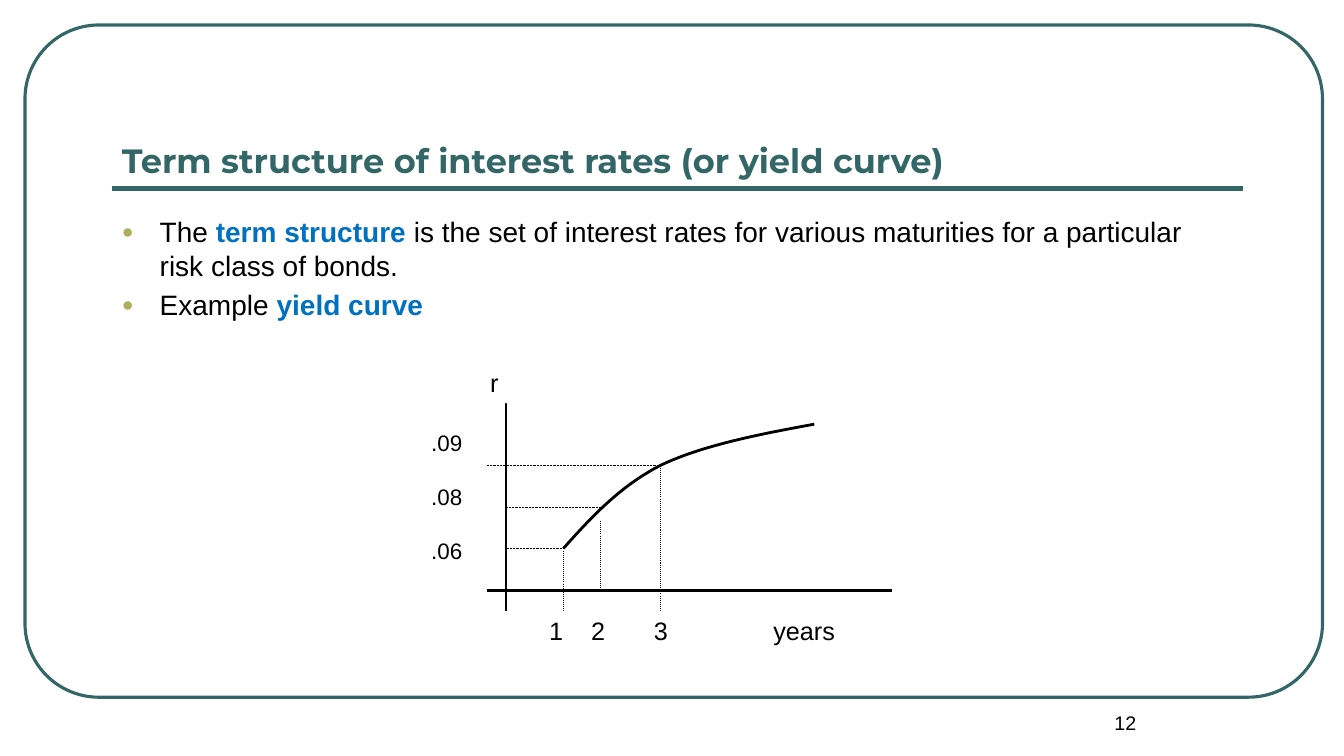
from dataclasses import dataclass

import lxml.etree
import pptx
import pptx.dml.color
import pptx.enum.dml
import pptx.enum.shapes
import pptx.enum.text
import pptx.oxml.ns
import pptx.util

Cm = pptx.util.Cm
Pt = pptx.util.Pt
qn = pptx.oxml.ns.qn
ALIGN = pptx.enum.text.PP_ALIGN
DASH = pptx.enum.dml.MSO_LINE

COLORS = {
    "teal": "336666",
    "black": "000000",
    "white": "FFFFFF",
    "term": "0070C0",
    "bullet": "AEAE5D",
}

# Chart geometry in cm
AXIS_X, AXIS_Y = 12.75, 14.88
LEFT_END, BOTTOM_END = 12.27, 15.39
YEAR_1, YEAR_2, YEAR_3 = 14.2, 15.14, 16.64
RATE_06, RATE_08, RATE_09 = 13.82, 12.78, 11.73
CURVE_END = (20.52, 10.69)


@dataclass(frozen=True)
class Line:
    start: tuple[float, float]
    end: tuple[float, float]
    width: float
    dotted: bool = False
    color: str = "black"


@dataclass(frozen=True)
class Label:
    box: tuple[float, float, float, float]
    texts: tuple[str, ...]
    size: float
    align: ALIGN = ALIGN.LEFT
    margin_left: float = 0.25
    margin_right: float = 0.25
    gap: float = 0
    tabs: tuple[float, ...] = ()
    filled: bool = False


LINES = [
    Line((2.82, 4.75), (31.32, 4.75), 3, color="teal"),
    Line((AXIS_X, 10.16), (AXIS_X, BOTTOM_END), 1.5),
    Line((LEFT_END, AXIS_Y), (22.48, AXIS_Y), 1.5),
    Line((YEAR_1, RATE_06), (AXIS_X, RATE_06), 0.5, True),
    Line((AXIS_X, RATE_08), (15.19, RATE_08), 0.5, True),
    Line((LEFT_END, RATE_09), (YEAR_3, RATE_09), 0.5, True),
    Line((YEAR_1, RATE_06), (YEAR_1, BOTTOM_END), 0.75, True),
    Line((YEAR_2, 13.13), (YEAR_2, 14.81), 0.75, True),
    Line((YEAR_3, RATE_09), (YEAR_3, BOTTOM_END), 0.75, True),
]

LABELS = [
    Label((25.4, 17.78, 5.92, 1.27), ("12",), 14, ALIGN.CENTER),
    Label((9.83, 10.69, 2.44, 3.66), (".09", ".08", ".06"), 16, ALIGN.RIGHT,
          margin_right=0.62, gap=19.5),
    Label((11.79, 9.12, 1.45, 1.04), ("r",), 18, margin_left=0.56, filled=True),
    Label((13.23, 15.39, 9.73, 1.57), ("1\t2\t3\tyears",), 18, margin_left=0.61,
          tabs=(1.06, 2.64, 5.65), filled=True),
]

# Each bullet is a list of (text, is a defined term)
BULLETS = [
    [("The ", False), ("term structure ", True),
     ("is the set of interest rates for various maturities "
      "for a particular risk class of bonds.", False)],
    [("Example ", False), ("yield curve", True)],
]

CURVE_SEGMENTS = [
    ((YEAR_1, RATE_06), (14.88, 13.06), (15.6, 12.27), (YEAR_3, RATE_09)),
    ((YEAR_3, RATE_09), (17.68, 11.23), (19.1, 10.95), CURVE_END),
]


def rgb(name: str) -> pptx.dml.color.RGBColor:
    return pptx.dml.color.RGBColor.from_string(COLORS[name])


def style_font(font, size: float, name: str = "Arial") -> None:
    font.name = name
    font.size = Pt(size)


def style_line(line, width: float, color: str) -> None:
    line.width = Pt(width)
    line.color.rgb = rgb(color)


def draw_line(slide, spec: Line) -> None:
    connector = slide.shapes.add_connector(
        pptx.enum.shapes.MSO_CONNECTOR.STRAIGHT,
        *(Cm(value) for value in spec.start + spec.end))
    style_line(connector.line, spec.width, spec.color)
    if spec.dotted:
        connector.line.dash_style = DASH.ROUND_DOT
    properties = connector._element.find(qn("p:spPr"))
    lxml.etree.SubElement(properties, qn("a:effectLst"))


def draw_label(slide, label: Label) -> None:
    box = slide.shapes.add_textbox(*(Cm(value) for value in label.box))
    if label.filled:
        box.fill.solid()
        box.fill.fore_color.rgb = rgb("white")
    frame = box.text_frame
    frame.word_wrap = True
    frame.margin_left = Cm(label.margin_left)
    frame.margin_right = Cm(label.margin_right)
    for index, text in enumerate(label.texts):
        paragraph = frame.add_paragraph() if index else frame.paragraphs[0]
        paragraph.text = text
        paragraph.alignment = label.align
        if index:
            paragraph.space_before = Pt(label.gap)
        if label.tabs:
            stops = lxml.etree.SubElement(
                paragraph._p.get_or_add_pPr(), qn("a:tabLst"))
            for position in label.tabs:
                lxml.etree.SubElement(
                    stops, qn("a:tab"), pos=str(Cm(position)), algn="l")
        style_font(paragraph.font, label.size)
        paragraph.font.color.rgb = rgb("black")


def draw_frame(slide) -> None:
    border = slide.shapes.add_shape(
        pptx.enum.shapes.MSO_SHAPE.ROUNDED_RECTANGLE,
        Cm(0.63), Cm(0.63), Cm(32.7), Cm(16.94))
    border.adjustments[0] = 0.11
    border.shadow.inherit = False
    border.fill.background()
    style_line(border.line, 2.25, "teal")


def bezier_point(segment, t: float) -> tuple[float, float]:
    weights = ((1 - t) ** 3, 3 * t * (1 - t) ** 2, 3 * t ** 2 * (1 - t), t ** 3)
    x, y = (sum(w * point[axis] for w, point in zip(weights, segment))
            for axis in (0, 1))
    return x, y


def draw_yield_curve(slide, steps: int = 20) -> None:
    points = [bezier_point(segment, step / steps)
              for segment in CURVE_SEGMENTS for step in range(1, steps + 1)]
    builder = slide.shapes.build_freeform(Cm(YEAR_1), Cm(RATE_06))
    builder.add_line_segments([(Cm(x), Cm(y)) for x, y in points], close=False)
    curve = builder.convert_to_shape()
    curve.shadow.inherit = False
    curve.fill.background()
    style_line(curve.line, 2, "black")


def place(placeholder, left: float, top: float, width: float, height: float) -> None:
    placeholder.left, placeholder.top = Cm(left), Cm(top)
    placeholder.width, placeholder.height = Cm(width), Cm(height)
    placeholder.text_frame.word_wrap = True
    placeholder.text_frame.auto_size = pptx.enum.text.MSO_AUTO_SIZE.NONE


def fill_title(title) -> None:
    place(title, 2.82, 1.49, 28.5, 3.18)
    title.text_frame.vertical_anchor = pptx.enum.text.MSO_ANCHOR.BOTTOM
    paragraph = title.text_frame.paragraphs[0]
    paragraph.text = "Term structure of interest rates (or yield curve)"
    paragraph.alignment = ALIGN.LEFT
    style_font(paragraph.font, 24, "Montserrat")
    paragraph.font.bold = True
    paragraph.font.color.rgb = rgb("teal")


def add_bullet(paragraph) -> None:
    properties = paragraph._p.get_or_add_pPr()
    properties.set("marL", str(Cm(0.95)))
    properties.set("indent", str(-Cm(0.95)))
    color = lxml.etree.SubElement(properties, qn("a:buClr"))
    lxml.etree.SubElement(color, qn("a:srgbClr"), val=COLORS["bullet"])
    lxml.etree.SubElement(properties, qn("a:buSzPct"), val="70000")
    lxml.etree.SubElement(properties, qn("a:buFont"), typeface="Arial")
    lxml.etree.SubElement(properties, qn("a:buChar"), char="●")


def fill_body(body) -> None:
    place(body, 2.82, 5.29, 28.5, 11.2)
    frame = body.text_frame
    for index, pieces in enumerate(BULLETS):
        paragraph = frame.add_paragraph() if index else frame.paragraphs[0]
        paragraph.space_before = Pt(4 if index else 0)
        add_bullet(paragraph)
        style_font(paragraph.font, 20)
        for text, is_term in pieces:
            run = paragraph.add_run()
            run.text = text
            run.font.bold = is_term
            run.font.color.rgb = rgb("term" if is_term else "black")


def main() -> None:
    deck = pptx.Presentation()
    deck.slide_width, deck.slide_height = Cm(33.87), Cm(19.05)
    slide = deck.slides.add_slide(deck.slide_layouts[1])
    fill_title(slide.shapes.title)
    fill_body(slide.placeholders[1])
    draw_frame(slide)
    for line in LINES:
        draw_line(slide, line)
    draw_yield_curve(slide)
    for label in LABELS:
        draw_label(slide, label)
    deck.save("out.pptx")


if __name__ == "__main__":
    main()
